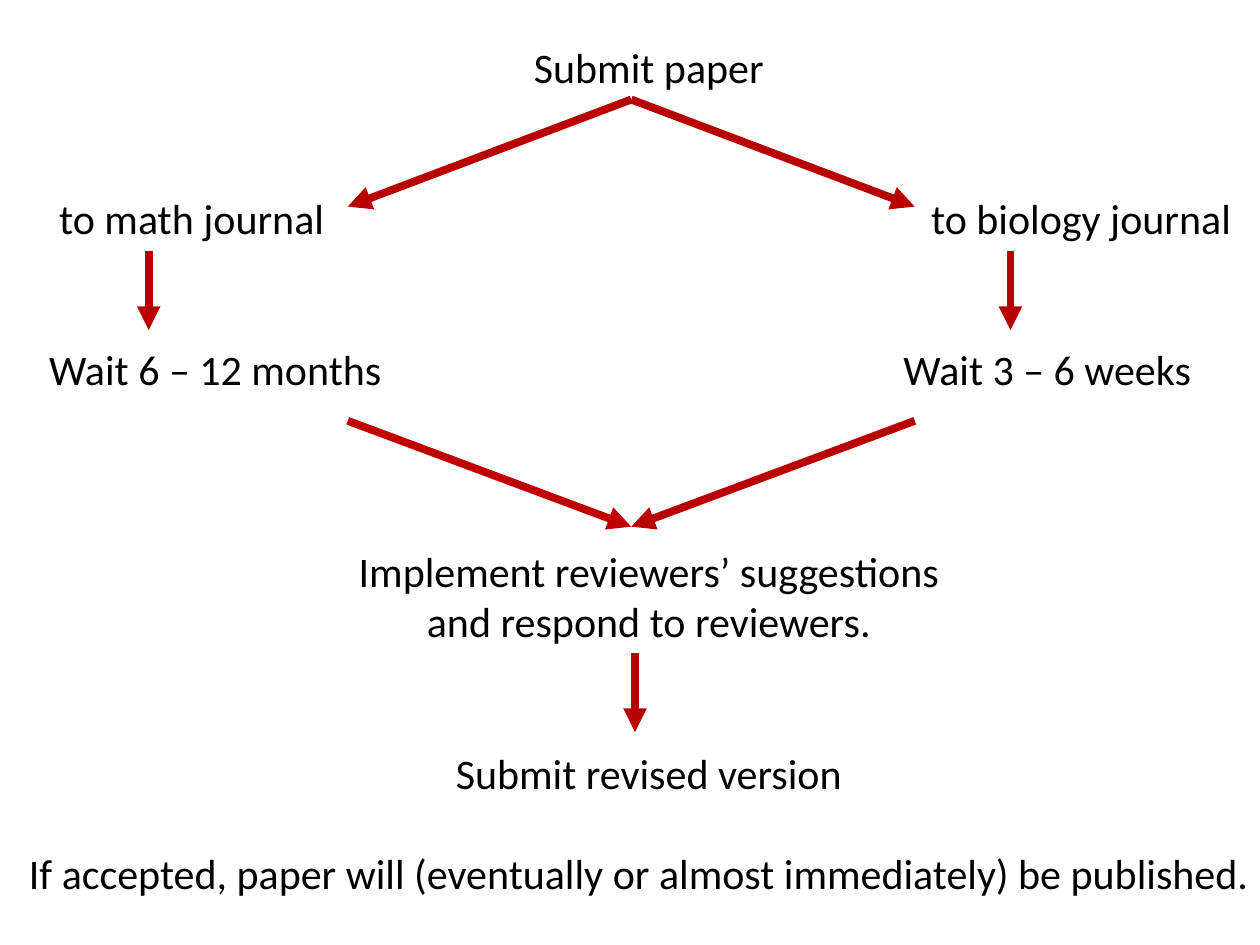
from pptx import Presentation
from pptx.dml.color import RGBColor
from pptx.enum.shapes import MSO_CONNECTOR
from pptx.enum.text import PP_ALIGN
from pptx.oxml.ns import qn
from pptx.util import Inches, Pt
from lxml import etree

LEFT, CENTER = PP_ALIGN.LEFT, PP_ALIGN.CENTER
STRAIGHT = MSO_CONNECTOR.STRAIGHT

FIRST_ROW, ROW_HEIGHT = 0.33, 0.4
MIDDLE, BRANCH_REACH = 5.01, 2.25
FORK_TOP, FORK_BOTTOM = 0.79, 1.64
MERGE_TOP, MERGE_BOTTOM = 3.34, 4.18
SHORT_ARROW = 0.63


def color(hex_code):
    return RGBColor.from_string(hex_code)


def write(frame, text, font="Calibri", size=24, ink="000000", align=LEFT):
    for index, line in enumerate(text.split("\n")):
        paragraph = frame.paragraphs[0] if index == 0 else frame.add_paragraph()
        paragraph.alignment = align
        run = paragraph.add_run()
        run.text = line
        run.font.name = font
        run.font.size = Pt(size)
        run.font.color.rgb = color(ink)


class Flowchart:
    arrow_color = "B90000"
    arrow_width = 4.5

    def __init__(self, slide):
        self.slide = slide

    def step(self, text, row, left, width, align=LEFT):
        lines = text.count("\n") + 1
        box = self.slide.shapes.add_textbox(
            Inches(left), Inches(FIRST_ROW + row * ROW_HEIGHT),
            Inches(width), Inches(lines * ROW_HEIGHT))
        frame = box.text_frame
        frame.word_wrap = True
        frame.margin_left = frame.margin_right = 0
        frame.margin_top = frame.margin_bottom = 0
        write(frame, text, align=align)

    def arrow(self, start, end, hex_code=arrow_color):
        connector = self.slide.shapes.add_connector(
            STRAIGHT, *(Inches(length) for length in (*start, *end)))
        connector.line.color.rgb = color(hex_code)
        connector.line.width = Pt(self.arrow_width)
        outline = connector.line._get_or_add_ln()
        etree.SubElement(outline, qn("a:tailEnd"), type="triangle")
        etree.SubElement(connector._element.spPr, qn("a:effectLst"))


def main():
    presentation = Presentation()
    presentation.slide_width = Inches(10)
    presentation.slide_height = Inches(7.5)
    chart = Flowchart(presentation.slides.add_slide(presentation.slide_layouts[6]))

    for text, row in (
        ("Submit paper", 0),
        ("Implement reviewers’ suggestions\nand respond to reviewers.", 10),
        ("Submit revised version", 14),
    ):
        chart.step(text, row, 2.15, 6, align=CENTER)

    for text, row, left, width in (
        ("to math journal", 3, 0.47, 2.4),
        ("to biology journal", 3, 7.39, 2.6),
        ("Wait 6 – 12 months", 6, 0.39, 2.9),
        ("Wait 3 – 6 weeks", 6, 7.17, 2.6),
        ("If accepted, paper will (eventually or almost immediately) be published.",
         16, 0.23, 9.77),
    ):
        chart.step(text, row, left, width)

    for x, top in ((5.04, 5.18), (8.02, 1.99), (1.18, 1.99)):
        chart.arrow((x, top), (x, top + SHORT_ARROW))

    for side, merge_color in ((-1, "C00000"), (1, "B90000")):
        branch = MIDDLE + side * BRANCH_REACH
        chart.arrow((MIDDLE, FORK_TOP), (branch, FORK_BOTTOM))
        chart.arrow((branch, MERGE_TOP), (MIDDLE, MERGE_BOTTOM), merge_color)

    presentation.save("out.pptx")


if __name__ == "__main__":
    main()
